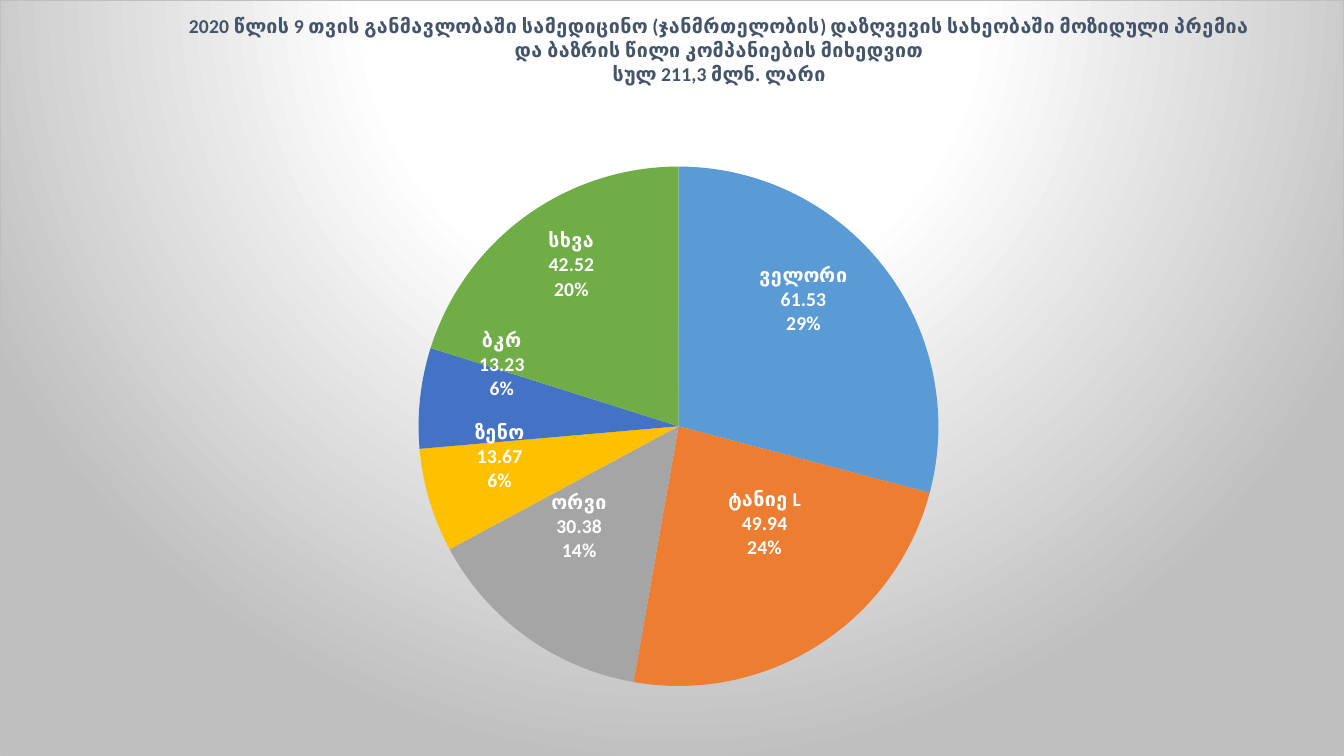
from copy import deepcopy
from dataclasses import dataclass

from pptx import Presentation
from pptx import util as u
from pptx.chart import data as cd
from pptx.dml.color import RGBColor
from pptx.enum import chart as ec
from pptx.oxml import parse_xml
from pptx.oxml.ns import nsdecls, qn

HUES = {
    "blue": "5B9BD5", "orange": "ED7D31", "grey": "A5A5A5", "gold": "FFC000",
    "navy": "4472C4", "green": "70AD47", "title": "44546A", "white": "FFFFFF",
    "edge": "BFBFBF", "black": "000000",
}
FACE = "Calibri"
WIDE, HIGH = 13.33, 7.5


@dataclass
class Slice:
    name: str
    value: float
    hue: str
    dx: float  # label shift from the slice centre, inches
    dy: float


SLICES = [
    Slice("ველორი", 61.53, "blue", 0.22, -0.47),
    Slice("ტანიე L", 49.94, "orange", 0.16, -0.12),
    Slice("ორვი", 30.38, "grey", -0.23, -0.05),
    Slice("ზენო", 13.67, "gold", -0.54, -0.07),
    Slice("ბკრ", 13.23, "navy", -0.47, -0.47),
    Slice("სხვა", 42.52, "green", -0.30, -0.56),
]
TITLE = [
    "2020 წლის 9 თვის განმავლობაში სამედიცინო (ჯანმრთელობის) დაზღვევის "
    "სახეობაში მოზიდული პრემია და ბაზრის წილი კომპანიების მიხედვით",
    "სულ 211,3 მლნ. ლარი",
]


def style(font, size: float, hue: str, bold: bool = False) -> None:
    font.name, font.size, font.bold = FACE, u.Pt(size), bold
    font.color.rgb = RGBColor.from_string(HUES[hue])


def write(par, words: str, *, size: float, hue: str, bold: bool = False) -> None:
    run = par.add_run()
    run.text = words
    style(run.font, size, hue, bold)


def place(node, spot: int, edge: bool = True, **box: float) -> None:
    """Give a chart part a manual layout; box holds x, y, w, h in inches."""
    for old in node.findall(qn("c:layout")):
        node.remove(old)
    tags = '<c:layoutTarget val="inner"/>' if "w" in box else ""
    if edge:
        tags += '<c:xMode val="edge"/><c:yMode val="edge"/>'
    for key, size in box.items():
        full = WIDE if key in "xw" else HIGH
        tags += f'<c:{key} val="{size / full:.4f}"/>'
    node.insert(spot, parse_xml(
        f'<c:layout {nsdecls("c")}><c:manualLayout>{tags}</c:manualLayout></c:layout>'))


def add_pie(slide):
    data = cd.CategoryChartData(number_format="#,##0.00")
    data.categories = [s.name for s in SLICES]
    data.add_series("Series 1", [s.value for s in SLICES])
    frame = slide.shapes.add_chart(
        ec.XL_CHART_TYPE.PIE, 0, 0, u.Inches(WIDE), u.Inches(HIGH), data)
    chart = frame.chart
    chart.has_legend = False
    style(chart.font, 10, "black")
    plot = chart.plots[0]
    plot.vary_by_categories = True
    for i, part in enumerate(SLICES):
        form = plot.series[0].points[i].format
        form.fill.solid()
        form.fill.fore_color.rgb = RGBColor.from_string(HUES[part.hue])
        form.line.fill.background()
    place(chart.element.find(".//" + qn("c:plotArea")), 0,
          x=4.15, y=1.65, w=5.16, h=5.16)
    return chart


def add_title(chart) -> None:
    title = chart.chart_title
    frame = title.text_frame
    for i, line in enumerate(TITLE):
        par = frame.add_paragraph() if i else frame.paragraphs[0]
        write(par, line, size=14, hue="title", bold=True)
    title.include_in_layout = False
    place(chart.element.find(".//" + qn("c:title")), 1, x=1.84, y=0.09)


def add_labels(chart) -> None:
    labels = chart.plots[0].series[0].data_labels
    labels.show_value = labels.show_percentage = labels.show_category_name = True
    labels.position = ec.XL_LABEL_POSITION.CENTER
    style(labels.font, 14, "white", True)
    root = chart.element.find(".//" + qn("c:ser")).find(qn("c:dLbls"))
    last = root.find(qn("c:showBubbleSize"))
    if last is None:
        last = root.find(qn("c:showPercent"))
    last.addnext(parse_xml(f'<c:separator {nsdecls("c")}>\n</c:separator>'))

    # Each label repeats the shared format and adds its own shift;
    # values keep the number format of the data, shares stay whole percents
    shared = [n for n in root if n.tag != qn("c:showLeaderLines")]
    for i, part in enumerate(SLICES):
        label = parse_xml(f'<c:dLbl {nsdecls("c")}><c:idx val="{i}"/></c:dLbl>')
        for node in shared:
            label.append(deepcopy(node))
        place(label, 1, edge=False, x=part.dx, y=part.dy)
        root.insert(i, label)


def add_back(chart) -> None:
    stops = "".join(
        f'<a:gs pos="{pos * 1000}"><a:srgbClr val="{HUES[hue]}"/></a:gs>'
        for pos, hue in [(0, "white"), (39, "white"), (100, "edge")])
    chart.element.find(qn("c:chart")).addnext(parse_xml(
        f'<c:spPr {nsdecls("c", "a")}><a:gradFill><a:gsLst>{stops}</a:gsLst>'
        '<a:path path="circle"><a:fillToRect l="50000" t="-80000" r="50000" '
        'b="180000"/></a:path></a:gradFill><a:ln w="9525"><a:solidFill>'
        f'<a:srgbClr val="{HUES["edge"]}"/></a:solidFill></a:ln></c:spPr>'))


def main() -> None:
    deck = Presentation()
    deck.slide_width, deck.slide_height = u.Inches(WIDE), u.Inches(HIGH)
    slide = deck.slides.add_slide(deck.slide_layouts[6])
    chart = add_pie(slide)
    add_title(chart)
    add_labels(chart)
    add_back(chart)
    deck.save("out.pptx")


if __name__ == "__main__":
    main()
